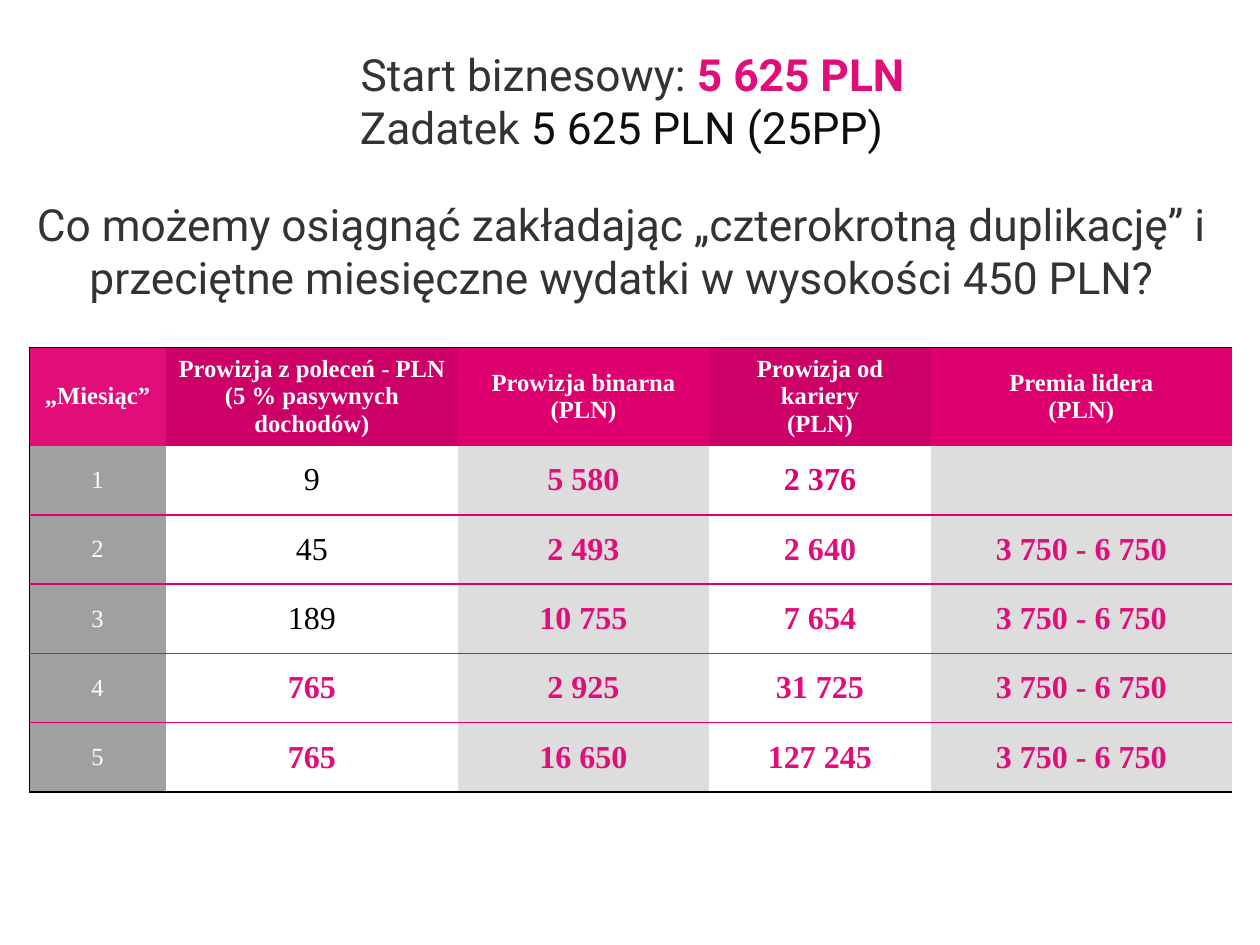
from dataclasses import dataclass
from typing import Optional

from lxml import etree
from pptx import Presentation
from pptx import util as u
from pptx.dml.color import RGBColor
from pptx.enum import text
from pptx.oxml import ns


@dataclass(frozen=True)
class Theme:
    heading_font: str = "Roboto"
    table_font: str = "Times New Roman"
    heading_size: float = 36
    label_size: float = 20
    value_size: float = 26
    pink: str = "E10E79"
    magenta: str = "DE006E"
    deep_magenta: str = "CC0066"
    dark: str = "333333"
    ink: str = "0D0D0D"
    black: str = "000000"
    white: str = "FFFFFF"
    rule_grey: str = "555555"
    month_grey: str = "A0A0A0"
    band_grey: str = "DDDDDD"


THEME = Theme()


@dataclass(frozen=True)
class Style:
    font: str
    size: float
    color: str
    bold: bool = False


@dataclass(frozen=True)
class Line:
    color: str
    width: float


@dataclass(frozen=True)
class HeadingLine:
    runs: tuple[tuple[str, Style], ...]
    space_before: float = 0
    right_margin: float = 0


@dataclass(frozen=True)
class Column:
    title: str
    width: float
    title_fill: str
    fill: Optional[str]
    values: tuple[str, ...]


PLAIN = Style(THEME.heading_font, THEME.heading_size, THEME.dark)
ACCENT = Style(THEME.heading_font, THEME.heading_size, THEME.pink, True)
INK = Style(THEME.heading_font, THEME.heading_size, THEME.ink)
TITLE = Style(THEME.table_font, THEME.label_size, THEME.white, True)
MONTH = Style(THEME.table_font, THEME.label_size, THEME.white)
SMALL_SUM = Style(THEME.table_font, THEME.value_size, THEME.black)
SUM = Style(THEME.table_font, THEME.value_size, THEME.pink, True)
FIRST_CAREER_SUM = Style(THEME.table_font, THEME.value_size, THEME.magenta, True)

HEADING = (
    HeadingLine((("Start biznesowy: ", PLAIN), ("5 625 PLN", ACCENT))),
    HeadingLine((("Zadatek ", PLAIN), ("5 625 PLN (25PP)", INK)), right_margin=18),
    HeadingLine(
        (("Co możemy osiągnąć zakładając „czterokrotną duplikację” i przeciętne "
          "miesięczne wydatki w wysokości 450 PLN?", PLAIN),),
        space_before=36,
    ),
)

LEADER_BONUS = "3 750 - 6 750"
COLUMNS = (
    Column("„Miesiąc”", 110.9, THEME.pink, THEME.month_grey, ("1", "2", "3", "4", "5")),
    Column("Prowizja z poleceń - PLN\v(5 % pasywnych dochodów)", 237.6,
           THEME.deep_magenta, None, ("9", "45", "189", "765", "765")),
    Column("Prowizja binarna\v(PLN)", 203.8, THEME.magenta, THEME.band_grey,
           ("5 580", "2 493", "10 755", "2 925", "16 650")),
    Column("Prowizja od kariery\v(PLN)", 180.7, THEME.deep_magenta, None,
           ("2 376", "2 640", "7 654", "31 725", "127 245")),
    Column("Premia lidera\v(PLN)", 244.1, THEME.magenta, THEME.band_grey,
           ("",) + (LEADER_BONUS,) * 4),
)
HEADER_HEIGHT, ROW_HEIGHT = 79.9, 56.3

EDGE = Line(THEME.black, 1)
DIVIDER = Line(THEME.magenta, 1.5)
# Rules from the top edge of the table down to its bottom edge
ROW_RULES = (EDGE, None, DIVIDER, DIVIDER, Line(THEME.rule_grey, 0.75), DIVIDER,
             Line(THEME.black, 1.5))


def format_run(run, style: Style) -> None:
    run.font.name = style.font
    run.font.size = u.Pt(style.size)
    run.font.bold = style.bold
    run.font.color.rgb = RGBColor.from_string(style.color)


def add_heading(slide, lines: tuple[HeadingLine, ...]) -> None:
    box = slide.shapes.add_textbox(u.Pt(2.2), u.Pt(33.1), u.Pt(1023.8), u.Pt(218.9))
    frame = box.text_frame
    frame.word_wrap = True
    frame.vertical_anchor = text.MSO_ANCHOR.MIDDLE
    frame.margin_left = frame.margin_right = u.Pt(4.3)
    frame.margin_top = frame.margin_bottom = u.Pt(4.3)
    for index, line in enumerate(lines):
        paragraph = frame.add_paragraph() if index else frame.paragraphs[0]
        paragraph.alignment = text.PP_ALIGN.CENTER
        if line.space_before:
            paragraph.space_before = u.Pt(line.space_before)
        if line.right_margin:
            paragraph._p.get_or_add_pPr().set("marR", str(u.Pt(line.right_margin)))
        for words, style in line.runs:
            run = paragraph.add_run()
            run.text = words
            format_run(run, style)


def set_border(cell, side: str, line: Optional[Line]) -> None:
    """Side is L, R, T or B; call in that order and before the cell's fill."""
    border = etree.SubElement(cell._tc.get_or_add_tcPr(), ns.qn(f"a:ln{side}"))
    if line is None:
        border.set("w", "0")
        etree.SubElement(border, ns.qn("a:noFill"))
        return
    border.set("w", str(u.Pt(line.width)))
    fill = etree.SubElement(border, ns.qn("a:solidFill"))
    etree.SubElement(fill, ns.qn("a:srgbClr")).set("val", line.color)


def fill_cell(cell, words: str, style: Style, color: Optional[str]) -> None:
    cell.vertical_anchor = text.MSO_ANCHOR.MIDDLE
    if color:
        cell.fill.solid()
        cell.fill.fore_color.rgb = RGBColor.from_string(color)
    else:
        cell.fill.background()
    paragraph = cell.text_frame.paragraphs[0]
    paragraph.alignment = text.PP_ALIGN.CENTER
    if words:
        paragraph.text = words
    for run in paragraph.runs:
        format_run(run, style)


def style_of(row: int, column: int) -> Style:
    if row == 0:
        return TITLE
    if column == 0:
        return MONTH
    if column == 1 and row <= 3:
        return SMALL_SUM
    return FIRST_CAREER_SUM if (row, column) == (1, 3) else SUM


def add_commission_table(slide, columns: tuple[Column, ...]) -> None:
    row_count = len(columns[0].values) + 1
    height = HEADER_HEIGHT + ROW_HEIGHT * (row_count - 1)
    width = sum(column.width for column in columns)
    table = slide.shapes.add_table(
        row_count, len(columns), u.Pt(23.8), u.Pt(282.2), u.Pt(width), u.Pt(height)
    ).table
    table.first_row = table.horz_banding = False
    for row_index, row in enumerate(table.rows):
        row.height = u.Pt(ROW_HEIGHT if row_index else HEADER_HEIGHT)
    for column_index, column in enumerate(columns):
        table.columns[column_index].width = u.Pt(column.width)
        for row_index, words in enumerate((column.title, *column.values)):
            cell = table.cell(row_index, column_index)
            set_border(cell, "L", None if column_index else EDGE)
            set_border(cell, "R", None)
            set_border(cell, "T", ROW_RULES[row_index])
            set_border(cell, "B", ROW_RULES[row_index + 1])
            fill_cell(cell, words, style_of(row_index, column_index),
                      column.fill if row_index else column.title_fill)


def main() -> None:
    presentation = Presentation()
    presentation.slide_width, presentation.slide_height = u.Pt(1024), u.Pt(768)
    slide = presentation.slides.add_slide(presentation.slide_layouts[6])
    add_heading(slide, HEADING)
    add_commission_table(slide, COLUMNS)
    presentation.save("out.pptx")


if __name__ == "__main__":
    main()
